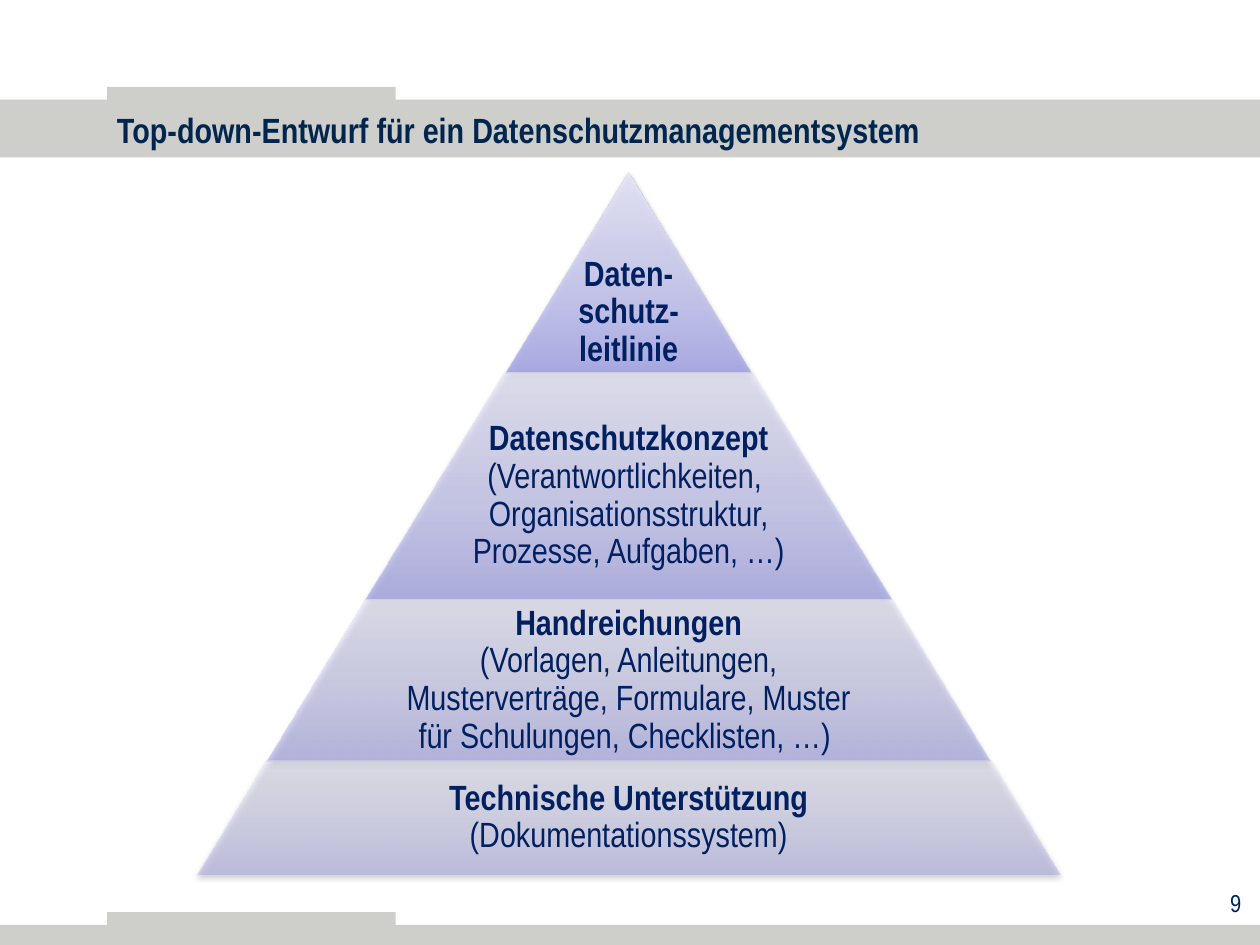
"""Build a slide with a four-tier pyramid of data protection documents."""
import pptx
import pptx.dml.color
import pptx.enum.shapes
import pptx.enum.text
import pptx.oxml
import pptx.oxml.ns
import pptx.util

Inches = pptx.util.Inches
RGB = pptx.dml.color.RGBColor
Align = pptx.enum.text.PP_ALIGN
Anchor = pptx.enum.text.MSO_ANCHOR
Form = pptx.enum.shapes.MSO_SHAPE

GREY = RGB(0xCE, 0xCF, 0xCB)
NAVY = RGB(0x00, 0x25, 0x4F)
BLUE = RGB(0x00, 0x20, 0x60)
BLACK = RGB(0, 0, 0)
STOPS = [(0, RGB(0xA9, 0xA9, 0xE9)), (35, RGB(0xC4, 0xC4, 0xEF)),
         (100, RGB(0xE8, 0xE8, 0xFA))]

FONT = "Arial Narrow"
SLOPE = 0.615
MID = 4.99
TOP = 1.37

# height, opacity, text width, text inset at top, anchor, bold lines, plain lines
TIERS = [
    (1.59, 90, 1.96, 0.03, Anchor.BOTTOM, ["Daten-", "schutz-", "leitlinie"], []),
    (1.8, 77, 2.71, 0.18, Anchor.MIDDLE, ["Datenschutzkonzept"],
     ["(Verantwortlichkeiten, ", "Organisationsstruktur,", "Prozesse, Aufgaben, …)"]),
    (1.28, 63, 3.73, 0.03, Anchor.MIDDLE, ["Handreichungen"],
     ["(Vorlagen, Anleitungen,", "Musterverträge, Formulare, Muster",
      "für Schulungen, Checklisten, …) "]),
    (0.9, 50, 4.45, 0.03, Anchor.MIDDLE, ["Technische Unterstützung"],
     ["(Dokumentationssystem)"]),
]


def add_bar(slide, left, top, width, height):
    """Add a plain grey bar."""
    bar = slide.shapes.add_shape(Form.RECTANGLE, Inches(left), Inches(top),
                                 Inches(width), Inches(height))
    bar.shadow.inherit = False
    bar.fill.solid()
    bar.fill.fore_color.rgb = GREY
    bar.line.fill.background()


def add_text(slide, left, top, width, height, lines, size, color, align, anchor):
    """Add a text box of (text, bold) lines in one paragraph."""
    box = slide.shapes.add_textbox(Inches(left), Inches(top),
                                   Inches(width), Inches(height))
    frame = box.text_frame
    frame.word_wrap = True
    frame.vertical_anchor = anchor
    para = frame.paragraphs[0]
    para.alignment = align
    para.font.name = FONT
    para.font.size = pptx.util.Pt(size)
    para.font.color.rgb = color
    for index, (text, bold) in enumerate(lines):
        if index:
            para.add_line_break()
        run = para.add_run()
        run.text = text
        run.font.bold = bold
    return frame


def paint(shape, alpha):
    """Give a shape the upward gradient and a soft shadow."""
    space = pptx.oxml.ns.nsdecls("a")
    stops = "".join(
        f'<a:gs pos="{pos * 1000}"><a:srgbClr val="{color}">'
        f'<a:alpha val="{alpha * 1000}"/></a:srgbClr></a:gs>'
        for pos, color in STOPS)
    fill = pptx.oxml.parse_xml(
        f'<a:gradFill {space} rotWithShape="1"><a:gsLst>{stops}</a:gsLst>'
        '<a:lin ang="16200000" scaled="0"/></a:gradFill>')
    shade = pptx.oxml.parse_xml(
        f'<a:outerShdw {space} blurRad="{pptx.util.Pt(3.1)}" '
        f'dist="{pptx.util.Pt(1.6)}" dir="5400000" rotWithShape="0">'
        f'<a:srgbClr val="{BLACK}"><a:alpha val="38000"/></a:srgbClr></a:outerShdw>')
    shape.shadow.inherit = False
    shape.line.fill.background()
    props = shape.element.spPr
    props.find(pptx.oxml.ns.qn("a:prstGeom")).addnext(fill)
    props.find(pptx.oxml.ns.qn("a:effectLst")).append(shade)


def add_tier(slide, top, tier):
    """Add one pyramid tier with its text and return its lower edge."""
    height, alpha, span, inset, anchor, heads, notes = tier
    base = top + height
    width = 2 * SLOPE * (base - TOP)
    shape = slide.shapes.add_shape(Form.TRAPEZOID, Inches(MID - width / 2),
                                   Inches(top), Inches(width), Inches(height))
    shape.adjustments[0] = SLOPE
    paint(shape, alpha)
    lines = [(text, True) for text in heads] + [(text, False) for text in notes]
    frame = add_text(slide, MID - span / 2, top, span, height, lines, 20, BLUE,
                     Align.CENTER, anchor)
    frame.margin_left = frame.margin_right = frame.margin_bottom = Inches(0.03)
    frame.margin_top = Inches(inset)
    frame.paragraphs[0].line_spacing = 0.9
    return base


def main():
    """Build and save the slide."""
    deck = pptx.Presentation()
    deck.slide_width, deck.slide_height = Inches(10), Inches(7.5)
    slide = deck.slides.add_slide(deck.slide_layouts[6])
    for top, height in [(0.79, 0.46), (7.34, 0.16)]:
        add_bar(slide, 0, top, 10, height)
        add_bar(slide, 0.85, top - 0.1, 2.29, 0.13)
    title = "Top-down-Entwurf für ein Datenschutzmanagementsystem"
    add_text(slide, 0.83, 0.82, 8.7, 0.42, [(title, True)], 20, NAVY,
             Align.LEFT, Anchor.MIDDLE)
    top = TOP
    for tier in TIERS:
        top = add_tier(slide, top, tier)
    add_text(slide, 7.73, 7, 2.22, 0.43, [("9", False)], 14, BLUE,
             Align.RIGHT, Anchor.TOP)
    deck.save("out.pptx")


if __name__ == "__main__":
    main()
